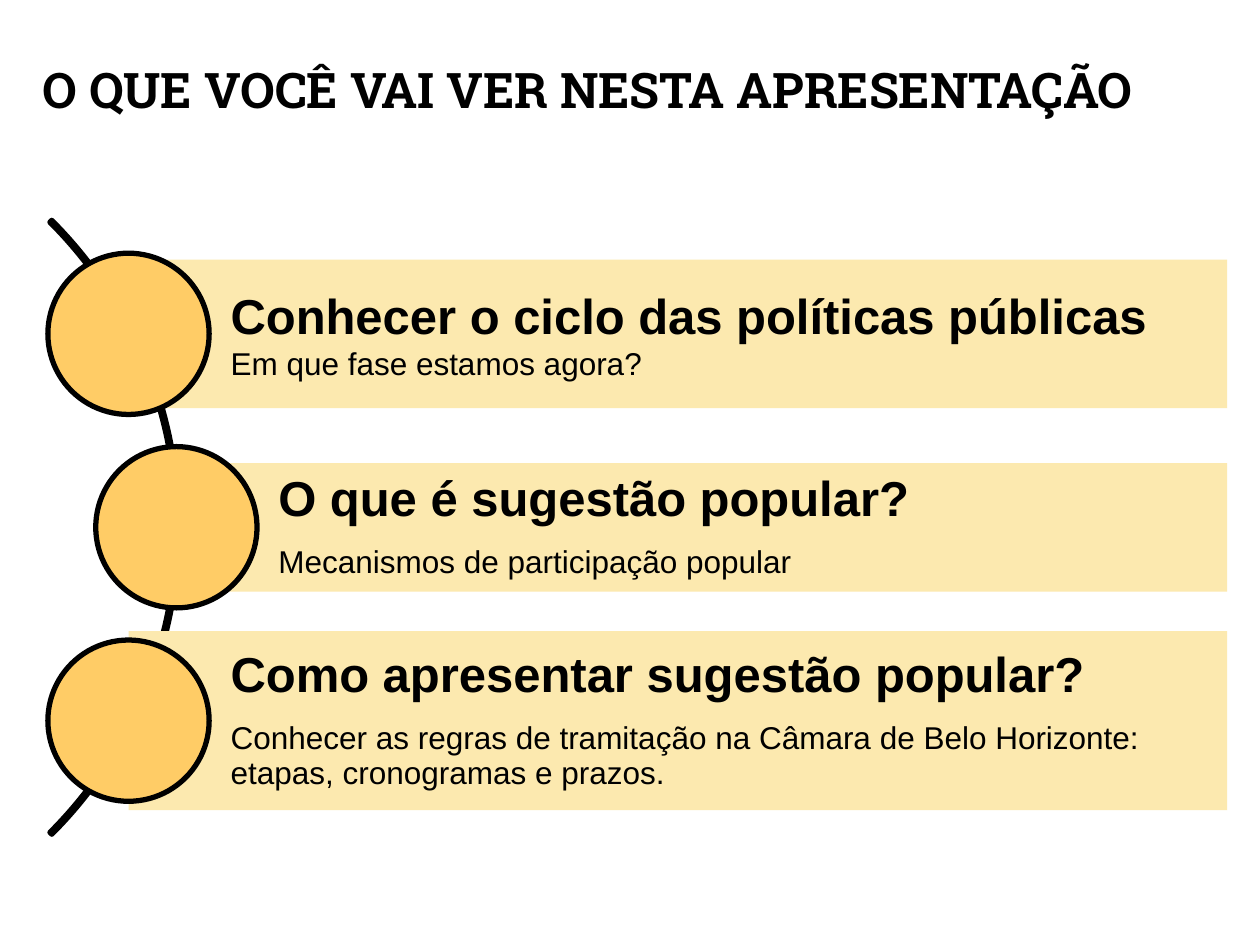
import pptx
import pptx.dml.color
import pptx.enum.shapes
import pptx.enum.text
import pptx.util

Inches = pptx.util.Inches
Pt = pptx.util.Pt
RGBColor = pptx.dml.color.RGBColor
MSO_SHAPE = pptx.enum.shapes.MSO_SHAPE
MSO_ANCHOR = pptx.enum.text.MSO_ANCHOR
PP_ALIGN = pptx.enum.text.PP_ALIGN

BLACK = RGBColor(0x00, 0x00, 0x00)
CREAM = RGBColor(0xFC, 0xE9, 0xAF)
ORANGE = RGBColor(0xFF, 0xCC, 0x66)

HEADING = {"name": "Arial", "size": Pt(28), "bold": True}
BODY = {"name": "Arial", "size": Pt(18), "bold": False}
TITLE = {"name": "Roboto Slab", "size": Pt(28), "bold": True}


def add_outline(kind, left, top, width, height, fill, outlined):
    shape = slide.shapes.add_shape(
        kind, Inches(left), Inches(top), Inches(width), Inches(height))
    shape.shadow.inherit = False
    if fill is None:
        shape.fill.background()
    else:
        shape.fill.solid()
        shape.fill.fore_color.rgb = fill
    if outlined:
        shape.line.color.rgb = BLACK
        shape.line.width = Pt(3)
    else:
        shape.line.fill.background()
    return shape


def write_paragraph(paragraph, text, font_format, paragraph_format):
    run = paragraph.add_run()
    run.text = text
    run.font.color.rgb = BLACK
    for name, value in font_format.items():
        setattr(run.font, name, value)
    paragraph.alignment = PP_ALIGN.LEFT
    for name, value in paragraph_format.items():
        setattr(paragraph, name, value)


presentation = pptx.Presentation()
presentation.slide_width = Inches(10)
presentation.slide_height = Inches(7.5)
slide = presentation.slides.add_slide(presentation.slide_layouts[6])

title = slide.shapes.add_textbox(Inches(0.24), Inches(0.44), Inches(9.76), Inches(0.71))
title.text_frame.word_wrap = True
title.text_frame.margin_top = Inches(0.03)
write_paragraph(title.text_frame.paragraphs[0],
                "O QUE VOCÊ VAI VER NESTA APRESENTAÇÃO", TITLE, {})

arc = add_outline(MSO_SHAPE.BLOCK_ARC, -5.47, 0.74, 6.89, 6.89, None, True)
for index, value in enumerate((189, 27, 0.003)):
    arc.adjustments[index] = value

CIRCLE_SIZE = 1.28
FIRST_CENTER = 2.65
PITCH = 1.535
BAND_RIGHT = 9.74
BAND_FRAME = {
    "word_wrap": True,
    "vertical_anchor": MSO_ANCHOR.MIDDLE,
    "margin_left": Inches(0.81),
    "margin_top": Inches(0.08),
    "margin_right": Inches(0.08),
    "margin_bottom": Inches(0.08),
}
SPACED = {"line_spacing": 0.9, "space_after": Pt(11)}
TIGHT = {"line_spacing": 0.9}

topics = [
    (1.02, 1.18, "Conhecer o ciclo das políticas públicas",
     "Em que fase estamos agora?", {}, {}),
    (1.4, 1.02, "O que é sugestão popular?",
     "Mecanismos de participação popular", SPACED, TIGHT),
    (1.02, 1.42, "Como apresentar sugestão popular?",
     "Conhecer as regras de tramitação na Câmara de Belo Horizonte: "
     "etapas, cronogramas e prazos.", SPACED, TIGHT),
]

for index, (left, height, heading, body, heading_spacing, body_spacing) in enumerate(topics):
    center = FIRST_CENTER + index * PITCH
    band = add_outline(MSO_SHAPE.RECTANGLE, left, center - height / 2,
                       BAND_RIGHT - left, height, CREAM, False)
    frame = band.text_frame
    for name, value in BAND_FRAME.items():
        setattr(frame, name, value)
    write_paragraph(frame.paragraphs[0], heading, HEADING, heading_spacing)
    write_paragraph(frame.add_paragraph(), body, BODY, body_spacing)
    add_outline(MSO_SHAPE.OVAL, left - CIRCLE_SIZE / 2, center - CIRCLE_SIZE / 2,
                CIRCLE_SIZE, CIRCLE_SIZE, ORANGE, True)

presentation.save("out.pptx")
